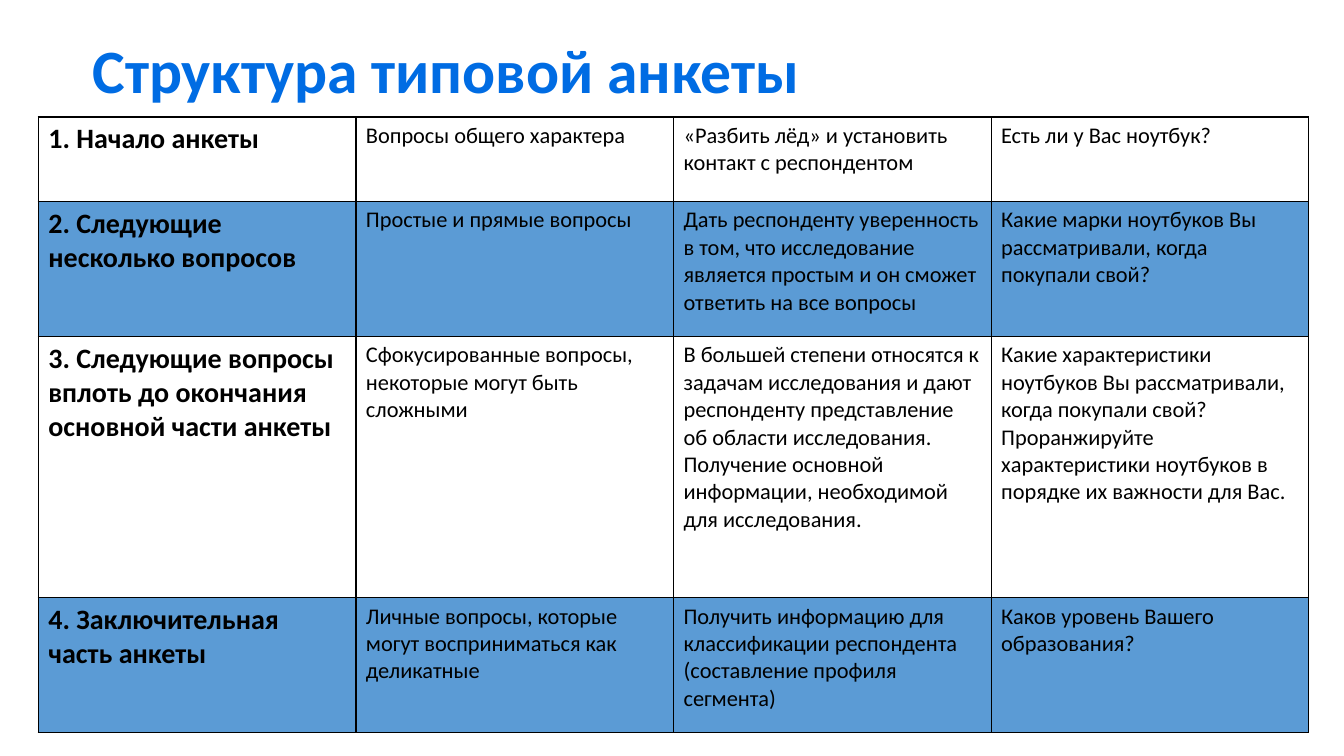
from dataclasses import dataclass

from lxml.etree import SubElement
from pptx import Presentation
from pptx.dml.color import RGBColor as RGB
from pptx.enum.text import MSO_ANCHOR as Anchor
from pptx.oxml.ns import qn
from pptx.util import Pt

PX = 9144  # 100 px to the inch


@dataclass(frozen=True)
class Theme:
    font: str = "Calibri"
    title: str = "006CE3"
    text: str = "000000"
    border: str = "000000"
    band: str = "5B9BD5"
    band_alpha: int = 20
    title_size: int = 44
    stage_size: int = 20
    body_size: int = 16
    border_width: int = 1


class SlideBuilder:
    def __init__(self, s, theme):
        self.s, self.theme = s, theme

    def style(self, p, size, color, bold):
        p.font.name, p.font.size, p.font.bold = self.theme.font, Pt(size), bold
        p.font.color.rgb = RGB.from_string(color)

    def title(self, text, x, y, w, h):
        tf = self.s.shapes.add_textbox(x * PX, y * PX, w * PX, h * PX).text_frame
        tf.word_wrap = True
        tf.vertical_anchor = Anchor.MIDDLE
        tf.text = text
        p = tf.paragraphs[0]
        p.line_spacing = 0.9
        self.style(p, self.theme.title_size, self.theme.title, True)

    def table(self, rows, x, y, col_width, heights):
        """Draw a grid with a bold first column and every second row tinted."""
        cols = len(rows[0])
        table = self.s.shapes.add_table(len(rows), cols, x * PX, y * PX,
                                        cols * col_width * PX, sum(heights) * PX).table
        table.first_row = table.horz_banding = False
        for col in table.columns:
            col.width = col_width * PX
        for i, (texts, height) in enumerate(zip(rows, heights)):
            table.rows[i].height = height * PX
            for j, text in enumerate(texts):
                self.cell(table.cell(i, j), text, stage=j == 0, banded=i % 2 == 1)

    def cell(self, cell, text, stage, banded):
        t = self.theme
        cell.text_frame.text = text
        for p in cell.text_frame.paragraphs:
            self.style(p, t.stage_size if stage else t.body_size, t.text, stage)
        self.borders(cell)
        if banded:
            cell.fill.solid()
            cell.fill.fore_color.rgb = RGB.from_string(t.band)
            color = cell.fill._xPr.find(".//" + qn("a:srgbClr"))
            SubElement(color, qn("a:alpha"), val=str(t.band_alpha * 1000))
        else:
            cell.fill.background()

    def borders(self, cell):
        tc_pr = cell._tc.get_or_add_tcPr()
        for side in ("lnL", "lnR", "lnT", "lnB"):
            ln = SubElement(tc_pr, qn("a:" + side), w=str(Pt(self.theme.border_width)))
            fill = SubElement(ln, qn("a:solidFill"))
            SubElement(fill, qn("a:srgbClr"), val=self.theme.border)


STAGES = [
    ("1. Начало анкеты", "Вопросы общего характера",
     "«Разбить лёд» и установить контакт с респондентом", "Есть ли у Вас ноутбук?"),
    ("2. Следующие несколько вопросов", "Простые и прямые вопросы",
     "Дать респонденту уверенность в том, что исследование является простым "
     "и он сможет ответить на все вопросы",
     "Какие марки ноутбуков Вы рассматривали, когда покупали свой?"),
    ("3. Следующие вопросы вплоть до окончания основной части анкеты",
     "Сфокусированные вопросы, некоторые могут быть сложными",
     "В большей степени относятся к задачам исследования и дают респонденту "
     "представление об области исследования. Получение основной информации, "
     "необходимой для исследования.",
     "Какие характеристики ноутбуков Вы рассматривали, когда покупали свой?\n"
     "Проранжируйте характеристики ноутбуков в порядке их важности для Вас."),
    ("4. Заключительная часть анкеты",
     "Личные вопросы, которые могут восприниматься как деликатные",
     "Получить информацию для классификации респондента (составление профиля сегмента)",
     "Каков уровень Вашего образования?"),
]


def main():
    prs = Presentation()
    prs.slide_width, prs.slide_height = 1333 * PX, 750 * PX
    s = prs.slides.add_slide(prs.slide_layouts[6])
    builder = SlideBuilder(s, Theme())
    builder.title("Структура типовой анкеты", 82, 0, 1150, 145)
    builder.table(STAGES, 38, 116, 315, (84, 134, 259, 134))
    prs.save("out.pptx")


if __name__ == "__main__":
    main()
